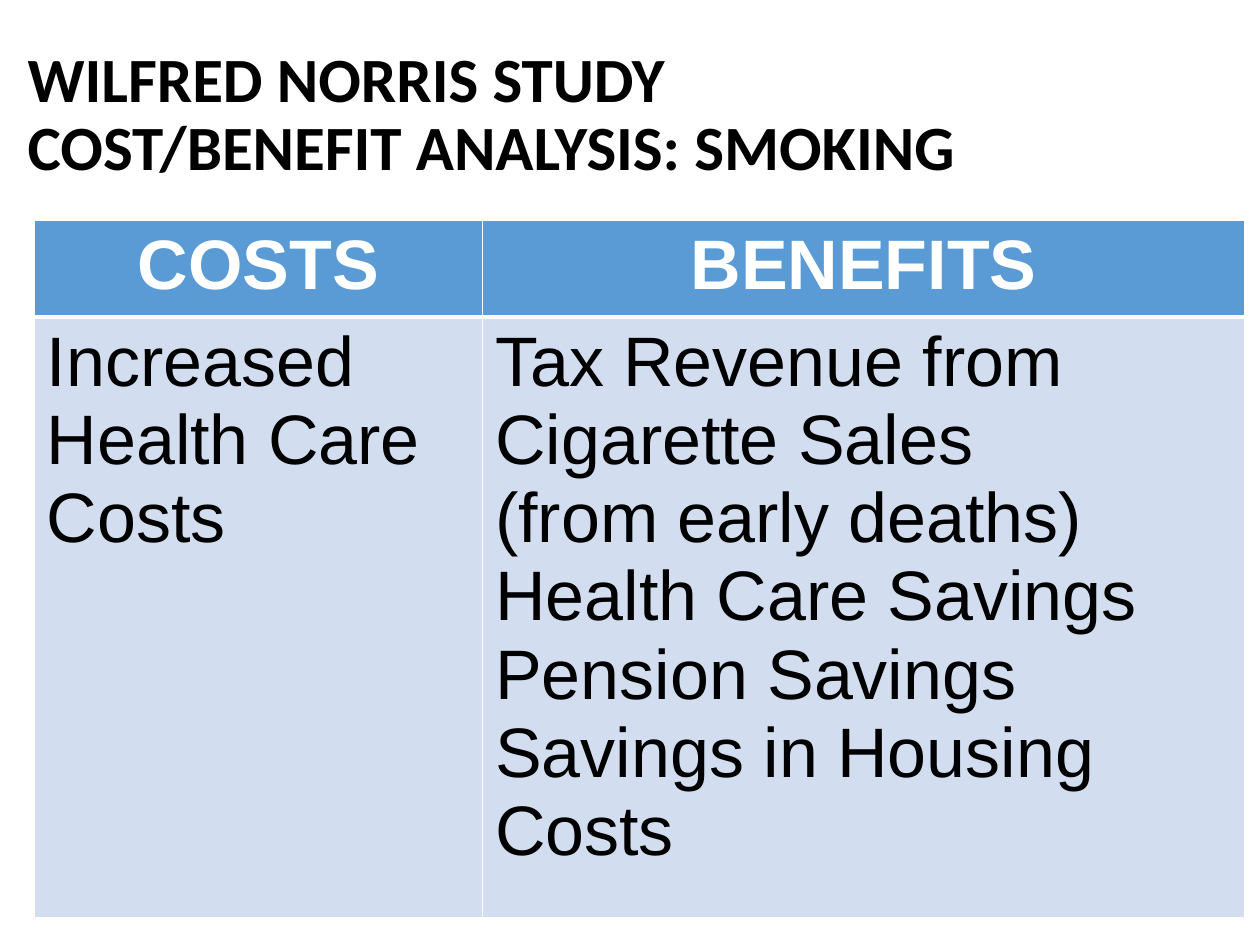
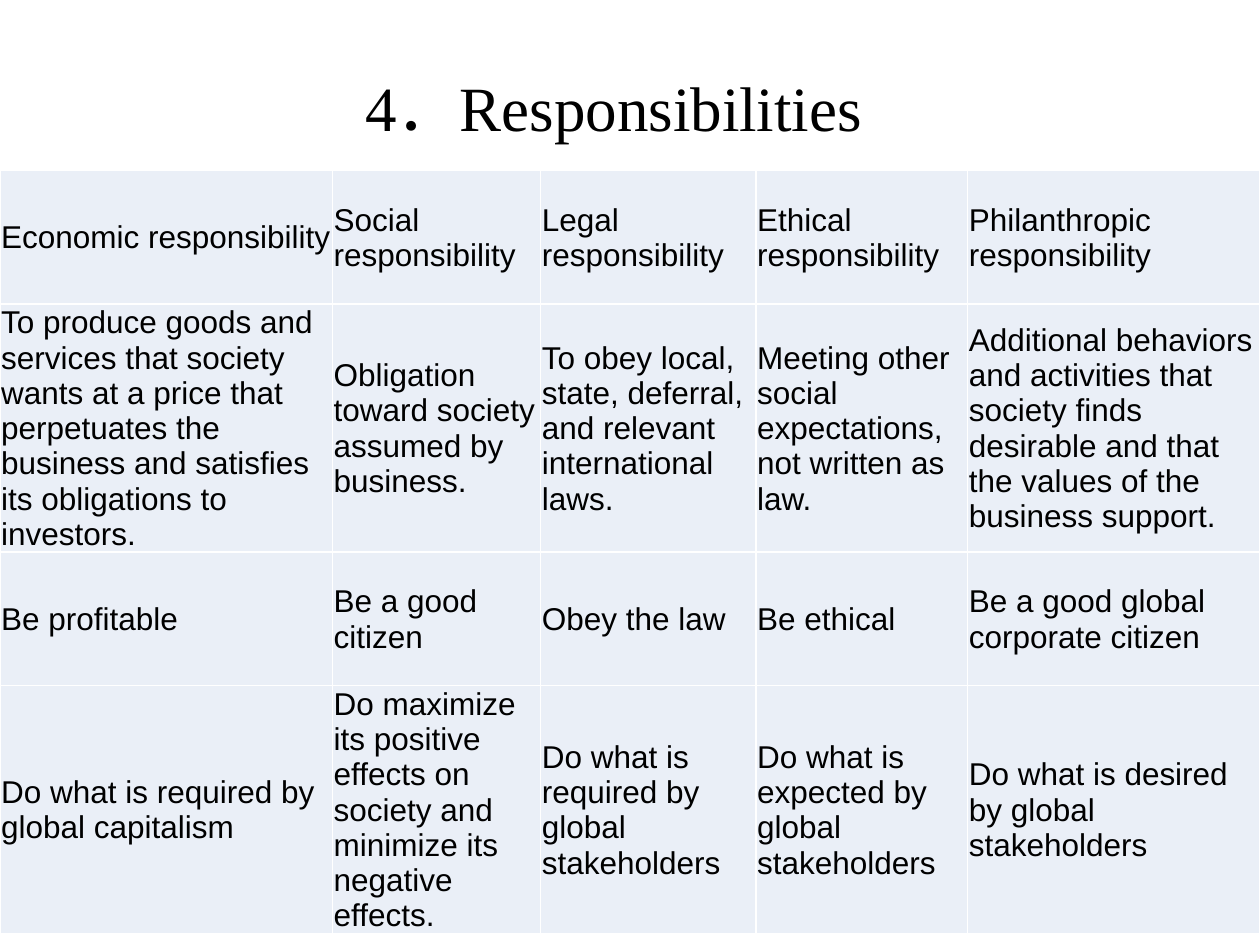
from dataclasses import dataclass

from pptx import Presentation
from pptx.dml.color import RGBColor as Rgb
from pptx.enum.text import MSO_ANCHOR as Anchor, MSO_AUTO_SIZE as Fit, PP_ALIGN as Align
from pptx.oxml import parse_xml
from pptx.oxml.ns import nsdecls
from pptx.util import Pt


@dataclass(frozen=True)
class Theme:
    black: str = "000000"
    white: str = "FFFFFF"
    head: str = "5B9BD5"
    body: str = "D2DEEF"
    pale: str = "EAEFF7"
    sans: str = "Arial"
    title: int = 36
    large: int = 40
    small: int = 18
    thin: int = 1
    thick: int = 3


@dataclass(frozen=True)
class Look:
    fill: str
    color: str
    size: int
    pads: tuple
    bold: bool = False
    align: Align = Align.LEFT
    anchor: Anchor = Anchor.TOP


class Deck:
    def __init__(self, theme):
        self.theme = theme
        self.prs = Presentation()
        self.prs.slide_width, self.prs.slide_height = Pt(720), Pt(540)
        self.slide = None

    def add(self):
        self.slide = self.prs.slides.add_slide(self.prs.slide_layouts[5])

    def style(self, frame, font, size, color, bold, align):
        for par in frame.paragraphs:
            par.alignment = align
            for run in par.runs:
                run.font.name, run.font.size = font, Pt(size)
                run.font.bold = bold
                run.font.color.rgb = Rgb.from_string(color)

    def title(self, text, box, font, bold=False, align=Align.LEFT):
        shape = self.slide.shapes.title
        shape.left, shape.top, shape.width, shape.height = map(Pt, box)
        frame = shape.text_frame
        frame.text = text
        frame.word_wrap, frame.auto_size = True, Fit.NONE
        frame.vertical_anchor = Anchor.MIDDLE
        self.style(frame, font, self.theme.title, self.theme.black, bold, align)
        for par in frame.paragraphs:
            par.line_spacing = 0.9

    def edges(self, cell, top, base):
        thin = self.theme.thin
        props = cell._tc.get_or_add_tcPr()
        for side, width in zip("LRTB", (thin, thin, top, base)):
            props.append(parse_xml(
                f'<a:ln{side} {nsdecls("a")} w="{Pt(width)}"><a:solidFill>'
                f'<a:srgbClr val="{self.theme.white}"/></a:solidFill></a:ln{side}>'))

    def cell(self, cell, text, look, top, base):
        self.edges(cell, top, base)
        cell.fill.solid()
        cell.fill.fore_color.rgb = Rgb.from_string(look.fill)
        (cell.margin_left, cell.margin_top,
         cell.margin_right, cell.margin_bottom) = map(Pt, look.pads)
        cell.vertical_anchor = look.anchor
        cell.text_frame.text = text
        self.style(cell.text_frame, self.theme.sans, look.size, look.color,
                   look.bold, look.align)

    def table(self, left, top, cols, rows, data, looks, rule):
        table = self.slide.shapes.add_table(
            len(rows), len(cols), Pt(left), Pt(top), Pt(sum(cols)), Pt(sum(rows))).table
        table.first_row = table.horz_banding = False
        for col, width in zip(table.columns, cols):
            col.width = Pt(width)
        for row, height in zip(table.rows, rows):
            row.height = Pt(height)
        thin = self.theme.thin
        for y, (line, look) in enumerate(zip(data, looks)):
            for x, text in enumerate(line):
                self.cell(table.cell(y, x), text, look,
                          rule if y == 1 else thin, rule if y == 0 else thin)


def costs(deck):
    theme = deck.theme
    pads = (7.2, 3.6, 7.2, 3.6)
    head = Look(theme.head, theme.white, theme.large, pads, True, Align.CENTER)
    body = Look(theme.body, theme.black, theme.large, pads)
    data = [
        ("COSTS", "BENEFITS"),
        ("Increased Health Care Costs",
         "Tax Revenue from Cigarette Sales\n(from early deaths)\n"
         "Health Care Savings\nPension Savings\nSavings in Housing Costs"),
    ]
    deck.add()
    deck.title("WILFRED NORRIS STUDY\vCOST/BENEFIT ANALYSIS: SMOKING",
               (8.6, 21.6, 702.7, 90), "Calibri", True)
    deck.table(19.5, 126, (256.3, 435.5), (55.2, 343.2), data, (head, body), theme.thick)


def duties(deck):
    theme = deck.theme
    look = Look(theme.pale, theme.black, theme.small, (0.7, 0.7, 0.7, 0),
                anchor=Anchor.MIDDLE)
    kinds = ("Economic", "Social", "Legal", "Ethical", "Philanthropic")
    data = [
        [f"{kind} responsibility" for kind in kinds],
        ("To produce goods and services that society wants at a price that "
         "perpetuates the business and satisfies its obligations to investors.",
         "Obligation toward society assumed by business.",
         "To obey local, state, deferral, and relevant international laws.",
         "Meeting other social expectations, not written as law.",
         "Additional behaviors and activities that society finds desirable "
         "and that the values of the business support."),
        ("Be profitable", "Be a good citizen", "Obey the law", "Be ethical",
         "Be a good global corporate citizen"),
        ("Do what is required by global capitalism",
         "Do maximize its positive effects on society and minimize its negative effects.",
         "Do what is required by global stakeholders",
         "Do what is expected by global stakeholders",
         "Do what is desired by global stakeholders"),
    ]
    deck.add()
    deck.title("4．Responsibilities", (31, 28.8, 639.4, 69), "Times New Roman",
               align=Align.CENTER)
    deck.table(0, 97.4, (190, 119, 123, 121, 167), (76.3, 141.8, 76.3, 117.4),
               data, [look] * len(data), theme.thin)


def main():
    deck = Deck(Theme())
    costs(deck)
    duties(deck)
    deck.prs.save("out.pptx")


if __name__ == "__main__":
    main()
